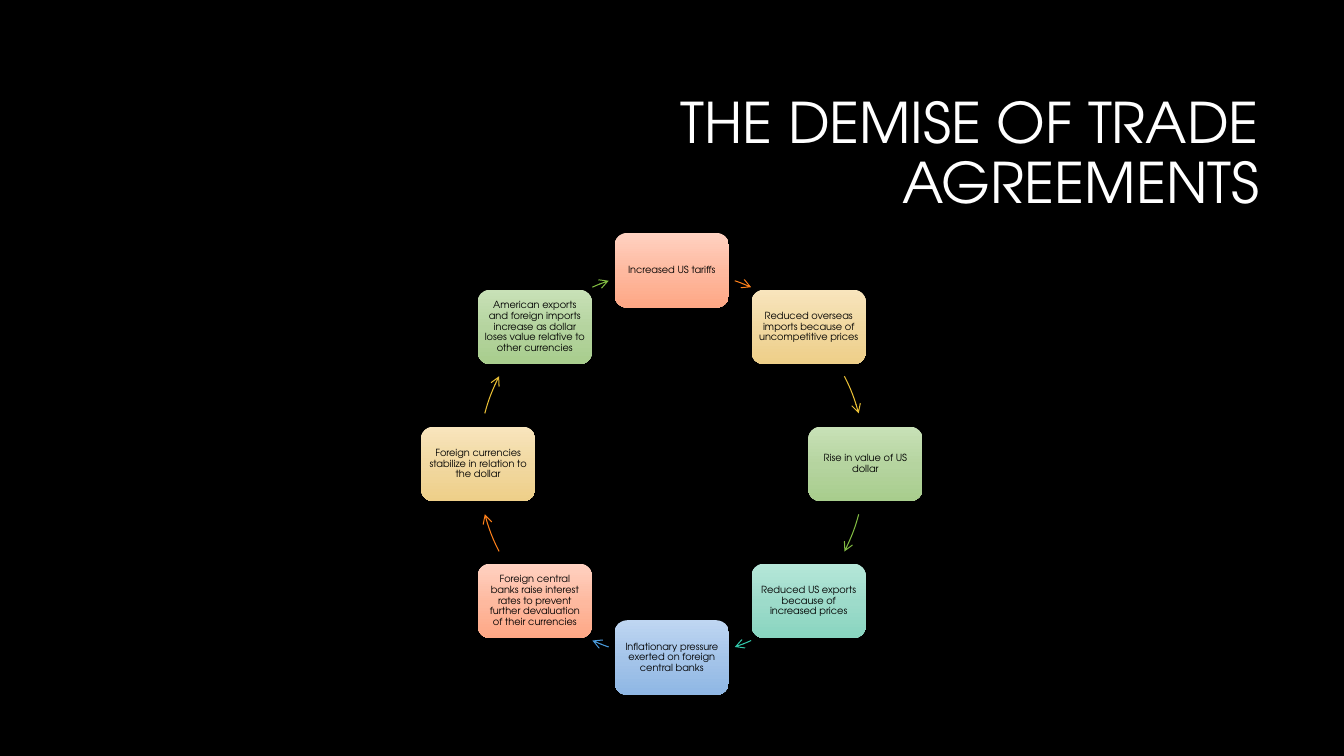
from copy import deepcopy
from dataclasses import dataclass
from math import cos, radians, sin

from lxml.etree import SubElement
from pptx import Presentation
from pptx.dml.color import RGBColor
from pptx.enum.shapes import MSO_SHAPE
from pptx.enum.text import MSO_ANCHOR, PP_ALIGN
from pptx.oxml.ns import qn
from pptx.util import Cm, Pt


@dataclass(frozen=True)
class Theme:
    font: str = "TeX Gyre Adventor"
    title_size: float = 40
    step_size: float = 7
    background: str = "000000"
    title: str = "FFFFFF"
    step_text: str = "000000"
    # Three gradient stops of the box, then the colour of the arrow leaving it
    orange: tuple = ("FFD2C2", "FEB99F", "FEA785", "FE801A")
    yellow: tuple = ("F8E5BD", "F1D8A0", "EECF89", "E9BF35")
    green: tuple = ("C8E1B7", "B5D49F", "A8CD8D", "81BB42")
    teal: tuple = ("B6E7D9", "9DDBCA", "89D5C0", "32C7A9")
    blue: tuple = ("BFD6F2", "A4C4E9", "8FB7E4", "4A9BDC")


def write_text(s, text, size, color, align, inset_x, inset_y, space_after=0):
    tf = s.text_frame
    frame_format = {
        "word_wrap": True, "vertical_anchor": MSO_ANCHOR.MIDDLE,
        "margin_left": inset_x, "margin_right": inset_x,
        "margin_top": inset_y, "margin_bottom": inset_y,
    }
    for name, value in frame_format.items():
        setattr(tf, name, value)
    p = tf.paragraphs[0]
    p.alignment, p.line_spacing, p.space_after = align, 0.9, Pt(space_after)
    r = p.add_run()
    r.text = text
    r.font.name, r.font.size = theme.font, Pt(size)
    r.font.color.rgb = RGBColor.from_string(color)


def fill_gradient(s, colors):
    """Fill from top to bottom with three stops."""
    s.fill.gradient()
    s.fill.gradient_angle = 270
    stop_list = s._element.spPr.find(qn("a:gradFill")).find(qn("a:gsLst"))
    stop_list.append(deepcopy(stop_list[-1]))
    for stop, position, color in zip(s.fill.gradient_stops, (0, 0.52, 1), colors):
        stop.position = position
        stop.color.rgb = RGBColor.from_string(color)


theme = Theme()
prs = Presentation()
prs.slide_width, prs.slide_height = Cm(33.87), Cm(19.05)
slide = prs.slides.add_slide(prs.slide_layouts[6])
slide.background.fill.solid()
slide.background.fill.fore_color.rgb = RGBColor.from_string(theme.background)

title = slide.shapes.add_textbox(Cm(8.05), Cm(2.13), Cm(23.93), Cm(3.58))
write_text(title, "THE DEMISE OF TRADE AGREEMENTS", theme.title_size, theme.title,
           PP_ALIGN.RIGHT, Cm(0.25), Cm(0.13))

steps = [
    ("Increased US tariffs", theme.orange),
    ("Reduced overseas imports because of uncompetitive prices", theme.yellow),
    ("Rise in value of US dollar", theme.green),
    ("Reduced US exports because of increased prices", theme.teal),
    ("Inflationary pressure exerted on foreign central banks", theme.blue),
    ("Foreign central banks raise interest rates to prevent further "
     "devaluation of their currencies", theme.orange),
    ("Foreign currencies stabilize in relation to the dollar", theme.yellow),
    ("American exports and foreign imports increase as dollar loses value "
     "relative to other currencies", theme.green),
]
center_x, center_y, radius = 16.93, 11.69, 4.88
box_w, box_h = 2.88, 1.88
# Start and end of each arrow on the right half, in degrees clockwise from the top
arrow_spans = [(19, 24.2), (63.1, 74.9), (105.1, 116.9), (155.8, 161)]

for i, (text, colors) in enumerate(steps):
    angle = radians(360 / len(steps) * i)
    x = center_x + radius * sin(angle)
    y = center_y - radius * cos(angle)
    box = slide.shapes.add_shape(MSO_SHAPE.ROUNDED_RECTANGLE, Cm(x - box_w / 2),
                                 Cm(y - box_h / 2), Cm(box_w), Cm(box_h))
    box.shadow.inherit = False
    box.line.fill.background()
    fill_gradient(box, colors)
    write_text(box, text, theme.step_size, theme.step_text, PP_ALIGN.CENTER,
               Cm(0.08), Cm(0.08), space_after=2.45)

    arrow = slide.shapes.add_shape(MSO_SHAPE.ARC, Cm(center_x - radius),
                                   Cm(center_y - radius), Cm(2 * radius), Cm(2 * radius))
    arrow.shadow.inherit = False
    arrow.fill.background()
    half, quarter = divmod(i, len(arrow_spans))
    for end, degrees in enumerate(arrow_spans[quarter]):
        # Arc angles run clockwise from the right, in units of 1/0.6 degree
        arrow.adjustments[end] = (degrees + 180 * half - 90) % 360 * 0.6
    arrow.line.color.rgb = RGBColor.from_string(colors[3])
    arrow.line.width = Pt(0.75)
    SubElement(arrow.line._get_or_add_ln(), qn("a:tailEnd"), type="arrow")

prs.save("out.pptx")
